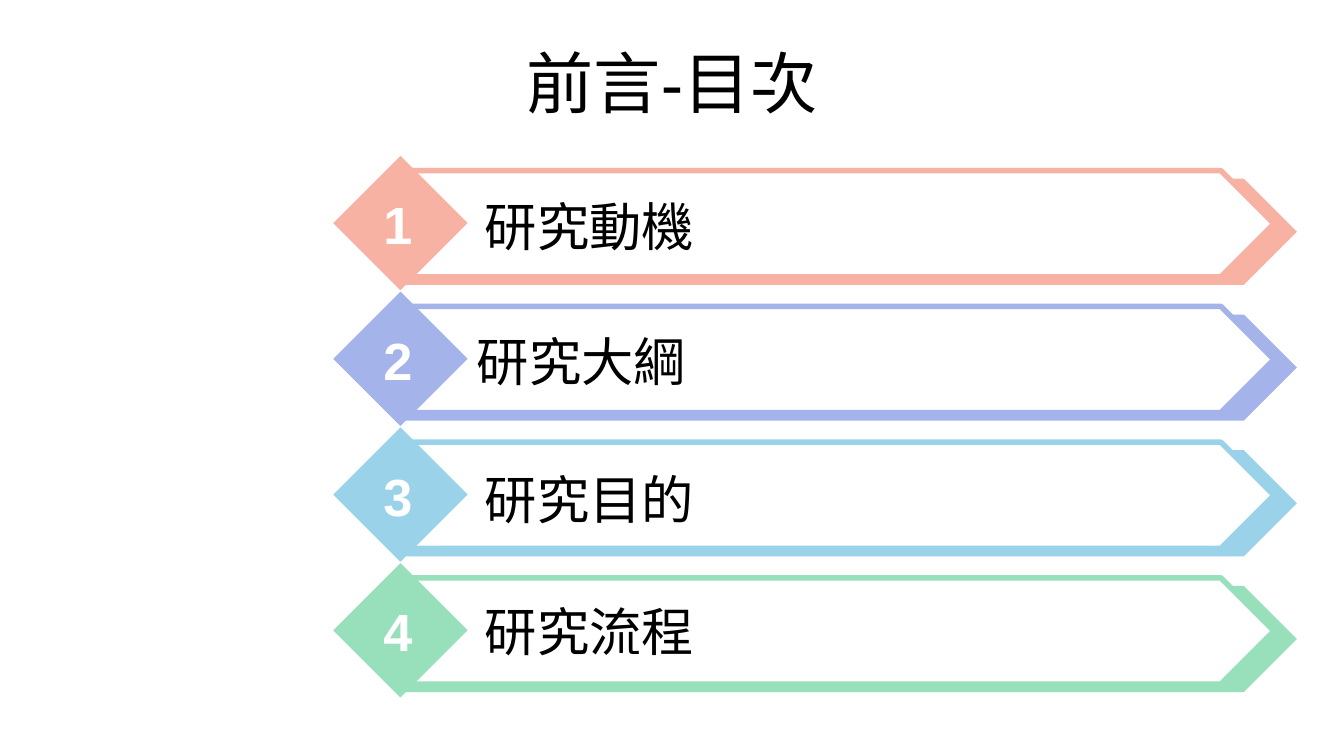
from pptx import Presentation
from pptx.dml.color import RGBColor
from pptx.enum.lang import MSO_LANGUAGE_ID as Language
from pptx.enum.shapes import MSO_SHAPE as Shape
from pptx.enum.text import MSO_ANCHOR as Anchor, PP_ALIGN as Align
from pptx.util import Inches, Pt

COLORS = {"black": "000000", "white": "FFFFFF", "coral": "F8B2A3",
          "violet": "A4B4EA", "sky": "9AD3E9", "mint": "98DFBB"}

# Label, colour, and label offset from the left and top of its row
ITEMS = [("研究動機", "coral", 1.03, 0.24),
         ("研究大綱", "violet", 0.97, 0.23),
         ("研究目的", "sky", 1.03, 0.25),
         ("研究流程", "mint", 1.03, 0.22)]
ROW_PITCH = 1.01


def color(name):
    return RGBColor.from_string(COLORS[name])


def add_text(page, text, left, top, width, height, size,
             fill="black", bold=False, align=Align.LEFT, anchor=Anchor.TOP):
    box = page.shapes.add_textbox(*map(Inches, (left, top, width, height)))
    frame = box.text_frame
    frame.word_wrap = True
    frame.vertical_anchor = anchor
    para = frame.paragraphs[0]
    para.alignment = align
    span = para.add_run()
    span.text = text
    style = {"name": "Arial", "size": Pt(size), "bold": bold,
             "language_id": Language.TRADITIONAL_CHINESE}
    for key, value in style.items():
        setattr(span.font, key, value)
    span.font.color.rgb = color(fill)


def add_block(page, kind, left, top, width, height, fill, line=None):
    shape = page.shapes.add_shape(kind, *map(Inches, (left, top, width, height)))
    shape.shadow.inherit = False
    shape.fill.solid()
    shape.fill.fore_color.rgb = color(fill)
    if line:
        shape.line.color.rgb = color(line)
        shape.line.width = Pt(3)
    else:
        shape.line.fill.background()


def add_title(page, left, top, width, height):
    add_text(page, "前言-目次", left, top, width, height, 36,
             align=Align.CENTER, anchor=Anchor.MIDDLE)


def add_item(page, left, top, number, label, accent, label_x, label_y):
    # Coloured arrow behind a white, outlined one
    add_block(page, Shape.PENTAGON, left + 0.53, top + 0.17, 6.64, 0.79, accent)
    add_block(page, Shape.PENTAGON, left + 0.53, top + 0.11, 6.47, 0.79,
              "white", accent)
    # Numbered diamond
    add_block(page, Shape.DIAMOND, left, top, 1, 1, accent)
    add_text(page, str(number), left + 0.26, top + 0.22, 0.44, 0.57, 28,
             "white", True, Align.CENTER, Anchor.MIDDLE)
    add_text(page, label, left + label_x, top + label_y, 5.2, 0.57, 28)


def main():
    deck = Presentation()
    # Widescreen 16:9
    deck.slide_width = Inches(10)
    deck.slide_height = Inches(10 * 9 / 16)
    page = deck.slides.add_slide(deck.slide_layouts[6])
    add_title(page, 0, 0.29, 10, 0.63)
    for index, item in enumerate(ITEMS):
        add_item(page, 2.48, 1.16 + index * ROW_PITCH, index + 1, *item)
    deck.save("out.pptx")


if __name__ == "__main__":
    main()
